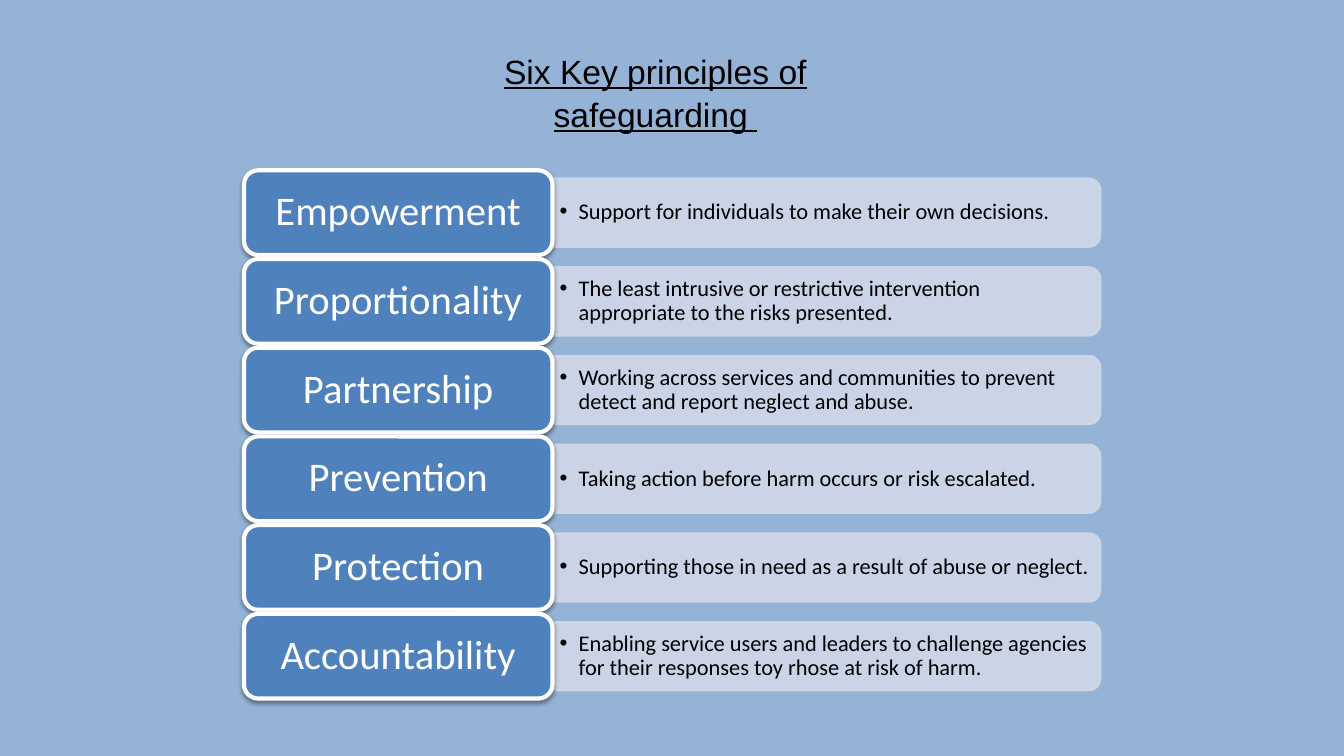
from lxml import etree
from pptx import Presentation
from pptx import util as u
from pptx.dml.color import RGBColor
from pptx.enum import shapes, text
from pptx.oxml import ns

COLORS = {
    "background": "95B3D7",
    "bar": "D0D8E8",
    "label": "4F81BD",
    "white": "FFFFFF",
    "black": "000000",
}
PRINCIPLES = [
    ("Empowerment", "Support for individuals to make their own decisions."),
    ("Proportionality", "The least intrusive or restrictive intervention appropriate to the risks presented."),
    ("Partnership", "Working across services and communities to prevent detect and report neglect and abuse."),
    ("Prevention", "Taking action before harm occurs or risk escalated."),
    ("Protection", "Supporting those in need as a result of abuse or neglect."),
    ("Accountability", "Enabling service users and leaders to challenge agencies for their responses toy rhose at risk of harm."),
]
FIRST_TOP, ROW_PITCH = 1.69, 0.88
LABEL_LEFT, LABEL_WIDTH, LABEL_HEIGHT = 2.42, 3.06, 0.84
BAR_LEFT, BAR_LENGTH, BAR_THICKNESS = 5.48, 5.43, 0.67
TEXT_WIDTH, TEXT_HEIGHT = 5.4, 0.6


def color(name):
    return RGBColor.from_string(COLORS[name])


def add_xml(parent, tag, **attributes):
    return etree.SubElement(parent, ns.qn(tag), attributes)


class PrinciplesSlide:
    def __init__(self, presentation):
        self.font = "Calibri"
        self.slide = presentation.slides.add_slide(presentation.slide_layouts[5])
        fill = self.slide.background.fill
        fill.solid()
        fill.fore_color.rgb = color("background")

    def paint(self, shape, fill, line, width):
        shape.shadow.inherit = False
        shape.fill.solid()
        shape.fill.fore_color.rgb = color(fill)
        shape.line.color.rgb = color(line)
        shape.line.width = u.Pt(width)

    def set_words(self, shape, words, size, ink, spacing, margins, font=None):
        frame = shape.text_frame
        frame.word_wrap = True
        frame.vertical_anchor = text.MSO_ANCHOR.MIDDLE
        frame.margin_left = frame.margin_right = u.Inches(margins[0])
        frame.margin_top = frame.margin_bottom = u.Inches(margins[1])
        frame.text = words
        paragraph = frame.paragraphs[0]
        paragraph.line_spacing = spacing
        run_font = paragraph.runs[0].font
        run_font.name = font or self.font
        run_font.size = u.Pt(size)
        run_font.color.rgb = color(ink)
        return paragraph

    def title(self, words):
        shape = self.slide.shapes.title
        shape.left, shape.top = u.Inches(4.23), u.Inches(0.43)
        shape.width, shape.height = u.Inches(4.54), u.Inches(0.5)
        paragraph = self.set_words(shape, words, 24, "black", 1.06, (0.1, 0.05), "Arial")
        paragraph.alignment = text.PP_ALIGN.CENTER
        paragraph.runs[0].font.underline = True
        shape.text_frame.vertical_anchor = text.MSO_ANCHOR.TOP
        shape.text_frame.auto_size = text.MSO_AUTO_SIZE.SHAPE_TO_FIT_TEXT

    def bar(self, middle):
        # Upright tab, turned so its rounded corners face right
        left = BAR_LEFT + (BAR_LENGTH - BAR_THICKNESS) / 2
        shape = self.slide.shapes.add_shape(
            shapes.MSO_SHAPE.ROUND_2_SAME_RECTANGLE,
            u.Inches(left), u.Inches(middle - BAR_LENGTH / 2),
            u.Inches(BAR_THICKNESS), u.Inches(BAR_LENGTH))
        shape.rotation = 90
        self.paint(shape, "bar", "bar", 2)
        for rgb in shape._element.spPr.iter(ns.qn("a:srgbClr")):
            add_xml(rgb, "a:alpha", val="90000")

    def description(self, middle, words):
        box = self.slide.shapes.add_textbox(
            u.Inches(BAR_LEFT), u.Inches(middle - TEXT_HEIGHT / 2),
            u.Inches(TEXT_WIDTH), u.Inches(TEXT_HEIGHT))
        paragraph = self.set_words(box, words, 16, "black", 0.9, (0.07, 0.03))
        properties = paragraph._p.get_or_add_pPr()
        indent = u.Inches(0.19)
        properties.set("marL", str(indent))
        properties.set("indent", str(-indent))
        add_xml(properties, "a:buFont", typeface="Arial")
        add_xml(properties, "a:buChar", char="•")

    def label(self, middle, words):
        shape = self.slide.shapes.add_shape(
            shapes.MSO_SHAPE.ROUNDED_RECTANGLE,
            u.Inches(LABEL_LEFT), u.Inches(middle - LABEL_HEIGHT / 2),
            u.Inches(LABEL_WIDTH), u.Inches(LABEL_HEIGHT))
        self.paint(shape, "label", "white", 3)
        paragraph = self.set_words(shape, words, 29, "white", 0.9, (0.12, 0.06))
        paragraph.alignment = text.PP_ALIGN.CENTER
        # Soft shadow straight below
        effects = shape._element.spPr.find(ns.qn("a:effectLst"))
        shadow = add_xml(effects, "a:outerShdw", blurRad=str(u.Pt(3.1)),
                         dist=str(u.Pt(1.6)), dir="5400000", rotWithShape="0")
        rgb = add_xml(shadow, "a:srgbClr", val=COLORS["black"])
        add_xml(rgb, "a:alpha", val="38000")


def main():
    presentation = Presentation()
    presentation.slide_width = u.Inches(13.33)
    presentation.slide_height = u.Inches(7.5)
    slide = PrinciplesSlide(presentation)

    # Heading
    slide.title("Six Key principles of safeguarding ")

    # One row for each principle
    for row, (name, meaning) in enumerate(PRINCIPLES):
        middle = FIRST_TOP + LABEL_HEIGHT / 2 + row * ROW_PITCH
        slide.bar(middle)
        slide.description(middle, meaning)
        slide.label(middle, name)

    presentation.save("out.pptx")


if __name__ == "__main__":
    main()
